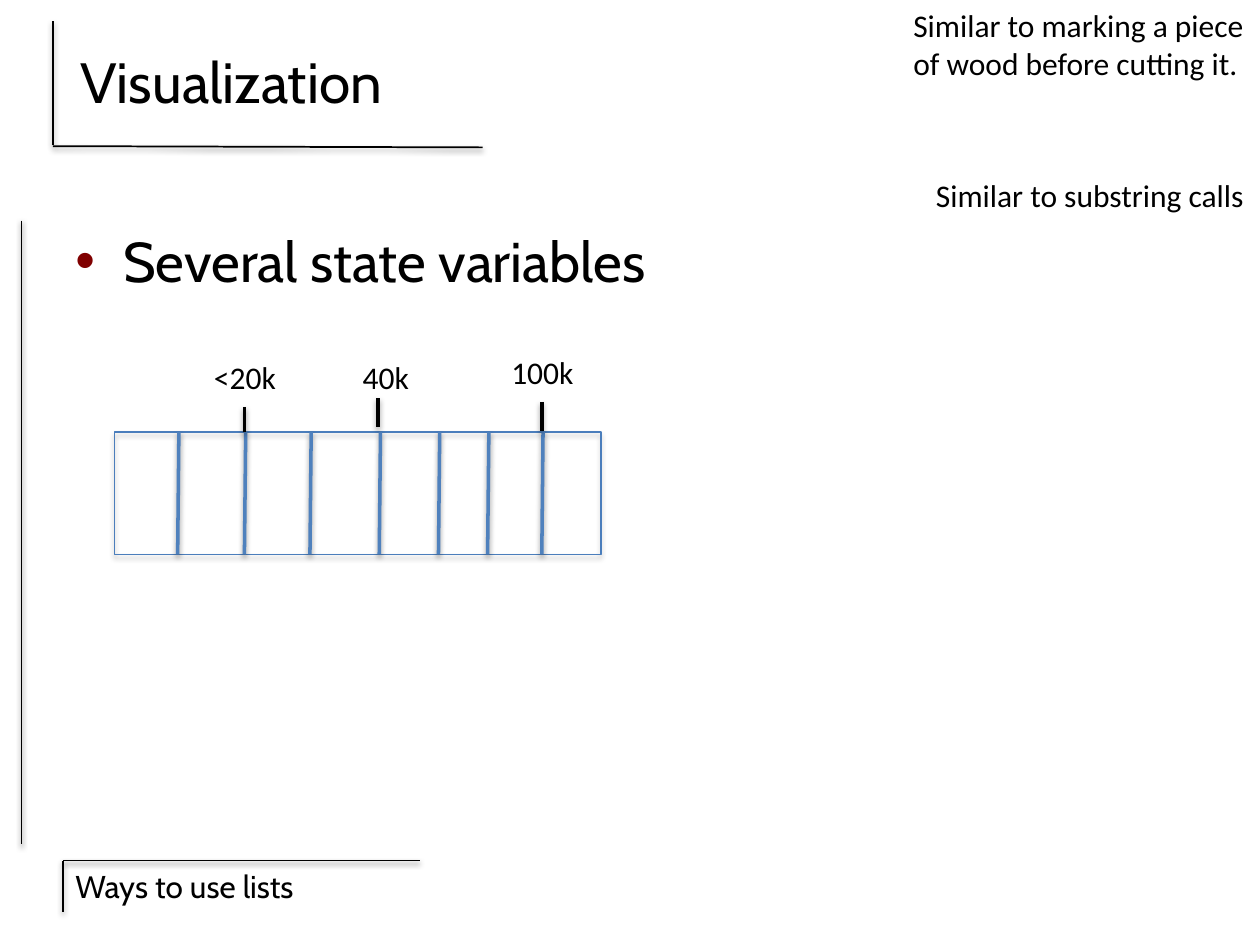
from lxml.etree import SubElement
from pptx import Presentation
from pptx.dml.color import RGBColor
from pptx.enum.shapes import MSO_CONNECTOR, MSO_SHAPE
from pptx.enum.text import MSO_ANCHOR, MSO_AUTO_SIZE, PP_ALIGN
from pptx.oxml.ns import qn
from pptx.util import Inches, Pt

BLACK = RGBColor(0x00, 0x00, 0x00)
BOX_BLUE = RGBColor(0x4B, 0x7E, 0xBC)
DIVIDER_BLUE = RGBColor(0x4F, 0x81, 0xBD)
BULLET_RED = RGBColor(0x80, 0x00, 0x00)

BOX_LEFT, BOX_TOP, BOX_WIDTH, BOX_HEIGHT = 0.91, 3.43, 3.86, 0.97
DIVIDERS = [1.42, 1.95, 2.47, 3.02, 3.49, 3.88, 4.31]
# Tick x, top and bottom, then label text, left, top and width
MARKS = [
    (1.94, 3.23, 3.43, "<20k", 1.6, 2.79, 0.7),
    (3.0, 3.16, 3.39, "40k", 2.78, 2.79, 0.57),
    (4.3, 3.19, 3.42, "100k", 3.96, 2.75, 0.7),
]
FRAME_LINES = [
    (3.33, 6.83, 0.5, 6.83),
    (0.17, 1.75, 0.17, 6.7),
    (0.5, 6.83, 0.5, 7.24),
    (3.83, 1.17, 0.42, 1.16),
    (0.42, 0.17, 0.42, 1.15),
]


def add_shadow(shape, opacity, distance):
    """Give the shape a soft shadow straight below it."""
    effects = SubElement(shape._element.spPr, qn("a:effectLst"))
    shadow = SubElement(effects, qn("a:outerShdw"), blurRad=str(Pt(3.1)),
                        dist=str(Pt(distance)), dir="5400000", rotWithShape="0")
    color = SubElement(shadow, qn("a:srgbClr"), val=str(BLACK))
    SubElement(color, qn("a:alpha"), val=str(opacity * 1000))


def add_line(slide, x1, y1, x2, y2, color=BLACK, width=1):
    line = slide.shapes.add_connector(
        MSO_CONNECTOR.STRAIGHT, Inches(x1), Inches(y1), Inches(x2), Inches(y2))
    line.line.color.rgb = color
    line.line.width = Pt(width)
    add_shadow(line, 38, 1.6)


def add_text(slide, lines, left, top, width, height=0.4, font="Calibri",
             size=18, wrap=False, grow=True):
    box = slide.shapes.add_textbox(
        Inches(left), Inches(top), Inches(width), Inches(height))
    frame = box.text_frame
    frame.word_wrap = wrap
    frame.auto_size = MSO_AUTO_SIZE.SHAPE_TO_FIT_TEXT if grow else MSO_AUTO_SIZE.NONE
    frame.text = "\n".join(lines)
    for paragraph in frame.paragraphs:
        paragraph.font.name = font
        paragraph.font.size = Pt(size)
        paragraph.font.color.rgb = BLACK
    return frame


def add_bullet(paragraph, indent):
    properties = paragraph._p.get_or_add_pPr()
    properties.set("marL", str(Inches(indent)))
    properties.set("indent", str(-Inches(indent)))
    color = SubElement(properties, qn("a:buClr"))
    SubElement(color, qn("a:srgbClr"), val=str(BULLET_RED))
    SubElement(properties, qn("a:buFont"), typeface="Arial")
    SubElement(properties, qn("a:buChar"), char="•")


def add_list_box(slide):
    box = slide.shapes.add_shape(
        MSO_SHAPE.RECTANGLE, Inches(BOX_LEFT), Inches(BOX_TOP),
        Inches(BOX_WIDTH), Inches(BOX_HEIGHT))
    box.fill.background()
    box.line.color.rgb = BOX_BLUE
    box.line.width = Pt(0.75)
    add_shadow(box, 35, 1.8)
    for x in DIVIDERS:
        add_line(slide, x, BOX_TOP, x - 0.01, BOX_TOP + BOX_HEIGHT, DIVIDER_BLUE, 2)


def main():
    presentation = Presentation()
    presentation.slide_width = Inches(10)
    presentation.slide_height = Inches(7.5)
    slide = presentation.slides.add_slide(presentation.slide_layouts[6])

    # Frame lines and footer
    for ends in FRAME_LINES:
        add_line(slide, *ends)
    add_text(slide, ["Ways to use lists"], 0.5, 6.83, 2.42, font="Cabin", wrap=True)

    # Title
    title = add_text(slide, ["Visualization"], 0.5, 0.17, 2.67, 0.95,
                     font="Cabin", size=32.4, wrap=True, grow=False)
    title.vertical_anchor = MSO_ANCHOR.MIDDLE
    title.paragraphs[0].alignment = PP_ALIGN.CENTER

    # Bullet list
    body = add_text(slide, ["Several state variables"], 0.5, 1.75, 9, 4.95,
                    font="Cabin", size=32, wrap=True, grow=False)
    body.paragraphs[0].space_before = Pt(6.4)
    # Bullet elements must precede the default run properties
    paragraph = body.paragraphs[0]
    add_bullet(paragraph, 0.38)
    properties = paragraph._p.pPr
    properties.append(properties.find(qn("a:defRPr")))

    # Divided box with marked positions
    add_list_box(slide)
    for x, top, bottom, label, left, label_top, width in MARKS:
        add_line(slide, x, top, x, bottom, width=2)
        add_text(slide, [label], left, label_top, width)

    # Side notes
    add_text(slide, ["Similar to marking a piece", "of wood before cutting it."],
             7.15, 0, 2.85, 0.71)
    add_text(slide, ["Similar to substring calls"], 7.33, 1.35, 2.67)

    presentation.save("out.pptx")


if __name__ == "__main__":
    main()
